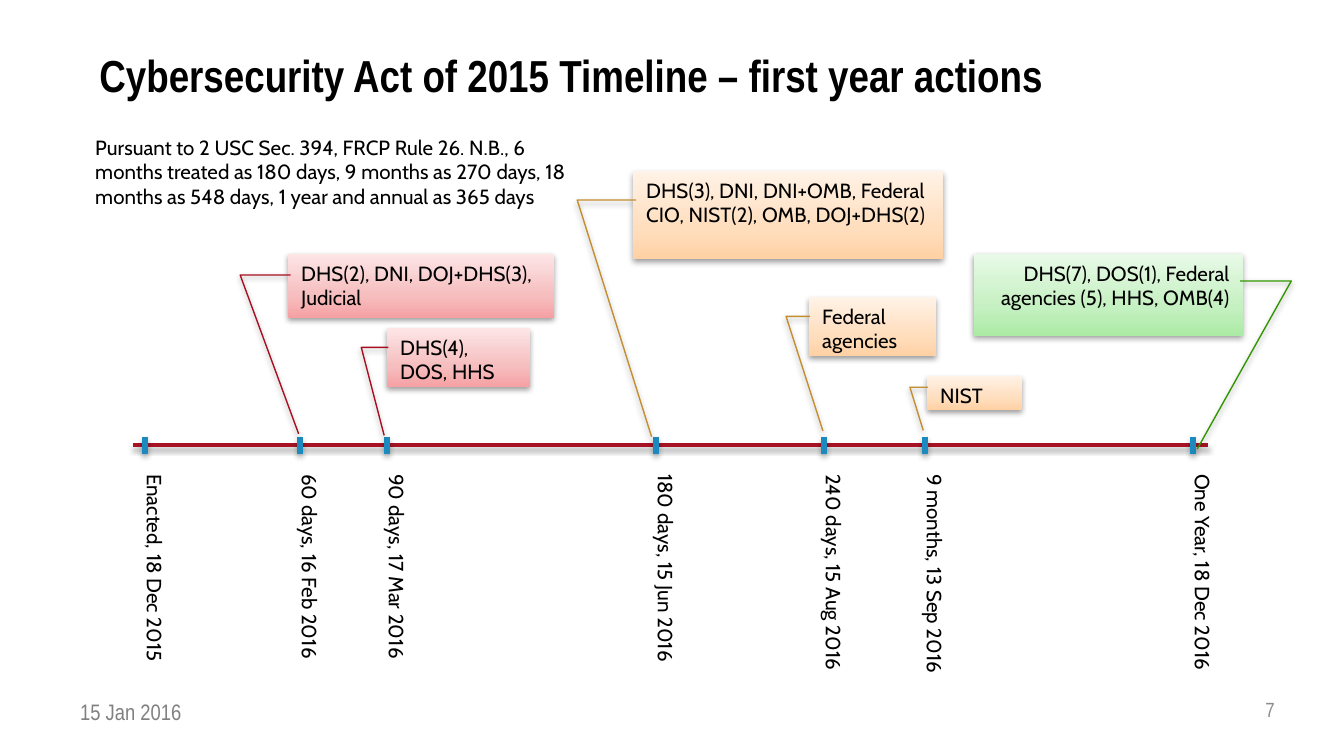
"""Build the Cybersecurity Act of 2015 first-year timeline slide."""
from copy import deepcopy

from lxml import etree
from pptx import Presentation
from pptx import util as u
from pptx.dml import color
from pptx.enum import shapes, text
from pptx.oxml import ns

PX_PER_INCH = 134.4
BODY = {"name": "Cabin", "size": u.Pt(11)}
LEFT, RIGHT = text.PP_ALIGN.LEFT, text.PP_ALIGN.RIGHT
TOP, MIDDLE = text.MSO_ANCHOR.TOP, text.MSO_ANCHOR.MIDDLE
GROW = text.MSO_AUTO_SIZE.SHAPE_TO_FIT_TEXT
GRADIENT_STOPS = (0, 0.35, 1)
RED = (("F5A1A3", "F6BEBF", "FDE5E6"), "A70F20")
ORANGE = (("FFD1A4", "FFDEBE", "FFF2E6"), "C38E2F")
GREEN = (("ABEBA5", "C5F0C1", "E8FAE7"), "329600")

AXIS_Y = 445
MILESTONES = [
    (145, 214, "Enacted, 18 Dec 2015"),
    (300, 211, "60 days, 16 Feb 2016"),
    (387, 212, "90 days, 17 Mar 2016"),
    (656, 220, "180 days, 15 Jun 2016"),
    (824, 223, "240 days, 15 Aug 2016"),
    (925, 226, "9 months, 13 Sep 2016"),
    (1193, 222, "One Year, 18 Dec 2016"),
]
CALLOUTS = [
    ((288, 254, 266, 64), (2.81, 0.04), RED, "DHS(2), DNI, DOJ+DHS(3), Judicial", False),
    ((387, 328, 143, 59), (1.82, -0.02), RED, "DHS(4), DOS, HHS", False),
    ((633, 171, 310, 88), (3.02, 0.06), ORANGE,
     "DHS(3), DNI, DNI+OMB, Federal CIO, NIST(2), OMB, DOJ+DHS(2)", False),
    ((809, 297, 127, 59), (2.27, 0.11), ORANGE, "Federal agencies", False),
    ((927, 376, 95, 34), (1.6, -0.04), ORANGE, "NIST", False),
    ((974, 254, 269, 82), (2.38, 0.17), GREEN,
     "DHS(7), DOS(1), Federal agencies (5), HHS, OMB(4)", True),
]


def px(*lengths):
    return [u.Emu(round(length * u.Inches(1) / PX_PER_INCH)) for length in lengths]


def rgb(value):
    return color.RGBColor.from_string(value)


def apply(target, values):
    for name, value in values.items():
        setattr(target, name, value)


class TimelineSlide:
    def __init__(self, presentation):
        self.slide = presentation.slides.add_slide(presentation.slide_layouts[5])

    def set_words(self, shape, words, font, ink="000000", align=LEFT, **frame):
        apply(shape.text_frame, {"word_wrap": True, "vertical_anchor": TOP, **frame})
        paragraph = shape.text_frame.paragraphs[0]
        paragraph.alignment = align
        run = paragraph.add_run()
        run.text = words
        apply(run.font, font)
        run.font.color.rgb = rgb(ink)

    def shadow(self, shape, opacity, distance):
        effects = etree.SubElement(shape.element.spPr, ns.qn("a:effectLst"))
        outer = etree.SubElement(effects, ns.qn("a:outerShdw"), blurRad="40000",
                                 dist=str(distance), dir="5400000", rotWithShape="0")
        black = etree.SubElement(outer, ns.qn("a:srgbClr"), val="000000")
        etree.SubElement(black, ns.qn("a:alpha"), val=str(opacity * 1000))

    def title(self, box, words):
        shape = self.slide.shapes.title
        apply(shape, dict(zip(("left", "top", "width", "height"), px(*box))))
        font = {"name": "Arial Narrow", "size": u.Pt(24), "bold": True}
        self.set_words(shape, words, font, vertical_anchor=MIDDLE,
                       auto_size=text.MSO_AUTO_SIZE.NONE)

    def text(self, box, words, font=BODY, vertical=False, **style):
        shape = self.slide.shapes.add_textbox(*px(*box))
        self.set_words(shape, words, font, **style)
        if vertical:
            shape.element.find(".//" + ns.qn("a:bodyPr")).set("vert", "vert")

    def line(self, ends, ink, width, opacity, distance):
        connector = self.slide.shapes.add_connector(shapes.MSO_CONNECTOR.STRAIGHT, *px(*ends))
        connector.line.color.rgb = rgb(ink)
        connector.line.width = u.Pt(width)
        self.shadow(connector, opacity, distance)

    def callout(self, box, tip, palette, words, flipped):
        kind = shapes.MSO_SHAPE.LINE_CALLOUT_2_NO_BORDER
        shape = self.slide.shapes.add_shape(kind, *px(*box))
        for index, value in enumerate((0.33, 0.01, 0.33, -0.18, *tip)):
            shape.adjustments[index] = value
        properties = shape.element.spPr
        if flipped:
            properties.find(ns.qn("a:xfrm")).set("flipH", "1")
        tints, ink = palette
        shape.fill.gradient()
        shape.fill.gradient_angle = 90
        stops = properties.find(".//" + ns.qn("a:gsLst"))
        stops.append(deepcopy(stops[0]))
        for stop, position, tint in zip(shape.fill.gradient_stops, GRADIENT_STOPS, tints):
            stop.position = position
            stop.color.rgb = rgb(tint)
        shape.line.color.rgb = rgb(ink)
        shape.line.width = u.Pt(0.75)
        self.shadow(shape, 38, 20000)
        self.set_words(shape, words, BODY, align=RIGHT if flipped else LEFT)


def main():
    presentation = Presentation()
    presentation.slide_width, presentation.slide_height = px(1344, 756)
    timeline = TimelineSlide(presentation)
    timeline.title((86, 42, 1023, 65), "Cybersecurity Act of 2015 Timeline – first year actions")
    timeline.line((133, AXIS_Y, 1208, AXIS_Y), "A71324", 2, 38, 20000)
    for x, length, label in MILESTONES:
        timeline.line((x, AXIS_Y - 8, x, AXIS_Y + 9), "1D8ABF", 3, 35, 23000)
        timeline.text((x - 23, AXIS_Y + 16, 52, length), label, vertical=True,
                      word_wrap=False, auto_size=GROW)
    timeline.text((82, 128, 515, 89),
                  "Pursuant to 2 USC Sec. 394, FRCP Rule 26. N.B., 6 months treated as 180 days, "
                  "9 months as 270 days, 18 months as 548 days, 1 year and annual as 365 days",
                  auto_size=GROW)
    for callout in CALLOUTS:
        timeline.callout(*callout)
    timeline.text((67, 692, 219, 35), "15 Jan 2016",
                  {"name": "Arial Narrow", "size": u.Pt(12)}, ink="808080")
    timeline.text((1187, 689, 101, 40), "7", {"name": "Arial Narrow", "size": u.Pt(11)},
                  ink="8C8C8C", align=RIGHT, vertical_anchor=MIDDLE)
    presentation.save("out.pptx")


if __name__ == "__main__":
    main()
